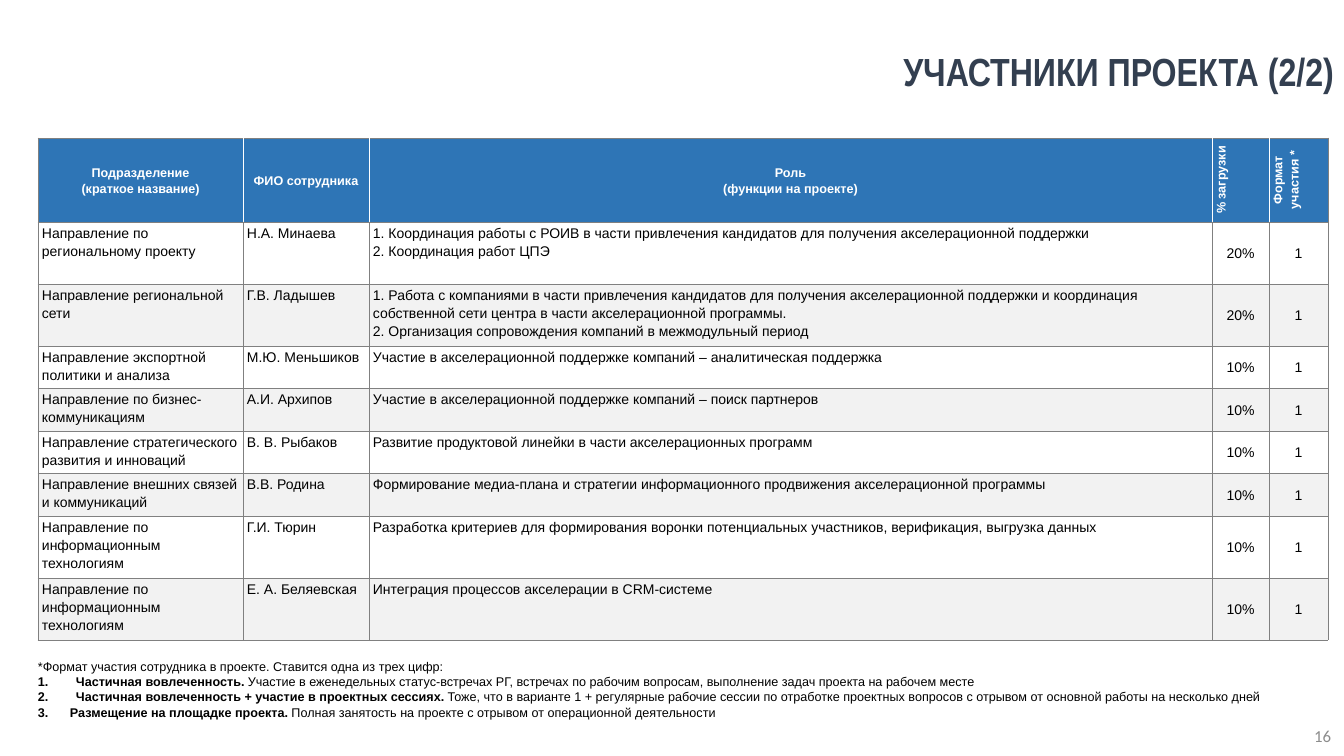
"""Build the project participants slide with its staffing table."""
from dataclasses import dataclass
from typing import NamedTuple

from lxml import etree
from pptx import Presentation
from pptx import util as u
from pptx.dml.color import RGBColor
from pptx.enum import text as t
from pptx.oxml import ns

EMU_PER_PX = 914400 / 100.8


@dataclass(frozen=True)
class Theme:
    title: str = "333F50"
    header: str = "2E75B6"
    band: str = "F2F2F2"
    grid: str = "808080"
    white: str = "FFFFFF"
    black: str = "000000"
    number: str = "8C8C8C"
    body_font: str = "Arial"
    title_font: str = "Arial Narrow"
    number_font: str = "Calibri"
    title_pt: int = 28
    number_pt: int = 12
    body_pt: int = 10
    small_pt: int = 9


class Column(NamedTuple):
    heading: str
    width: int
    centred: bool = False
    upright: bool = False


class Member(NamedTuple):
    unit: str
    name: str
    role: str
    load: str
    mode: str
    height: int


class Note(NamedTuple):
    term: str
    meaning: str
    indent: int


TH = Theme()
HEADER_HEIGHT = 84
COLUMNS = [
    Column("Подразделение\v(краткое название)", 205),
    Column("ФИО сотрудника", 126),
    Column("Роль\v(функции на проекте)", 843),
    Column("% загрузки", 57, True, True),
    Column("Формат\vучастия *", 59, True, True),
]
MEMBERS = [
    Member("Направление по региональному проекту", "Н.А. Минаева",
           "1. Координация работы с РОИВ в части привлечения кандидатов для получения "
           "акселерационной поддержки\n2. Координация работ ЦПЭ", "20%", "1", 62),
    Member("Направление региональной сети", "Г.В. Ладышев",
           "1. Работа с компаниями в части привлечения кандидатов для получения акселерационной "
           "поддержки и координация собственной сети центра в части акселерационной программы.\n"
           "2. Организация сопровождения компаний в межмодульный период", "20%", "1", 62),
    Member("Направление экспортной политики и анализа", "М.Ю. Меньшиков",
           "Участие в акселерационной поддержке компаний – аналитическая поддержка", "10%", "1", 42),
    Member("Направление по бизнес-коммуникациям", "А.И. Архипов",
           "Участие в акселерационной поддержке компаний – поиск партнеров", "10%", "1", 43),
    Member("Направление стратегического развития и инноваций", "В. В. Рыбаков",
           "Развитие продуктовой линейки в части акселерационных программ", "10%", "1", 42),
    Member("Направление внешних связей и коммуникаций", "В.В. Родина",
           "Формирование медиа-плана и стратегии информационного продвижения "
           "акселерационной программы", "10%", "1", 43),
    Member("Направление по информационным технологиям", "Г.И. Тюрин",
           "Разработка критериев для формирования воронки потенциальных участников, "
           "верификация, выгрузка данных", "10%", "1", 62),
    Member("Направление по информационным технологиям", "Е. А. Беляевская",
           "Интеграция процессов акселерации в CRM-системе", "10%", "1", 62),
]
NOTES = [
    Note("Частичная вовлеченность.",
         " Участие в еженедельных статус-встречах РГ, встречах по рабочим вопросам, "
         "выполнение задач проекта на рабочем месте", 38),
    Note("Частичная вовлеченность + участие в проектных сессиях.",
         " Тоже, что в варианте 1 + регулярные рабочие сессии по отработке проектных вопросов "
         "с отрывом от основной работы на несколько дней", 38),
    Note("Размещение на площадке проекта.",
         " Полная занятость на проекте с отрывом от операционной деятельности", 32),
]


def px(n: int) -> int:
    return round(n * EMU_PER_PX)


def write(p, text: str, *, size: int = TH.body_pt, color: str = TH.black,
          font: str = TH.body_font, bold: bool = False, align=t.PP_ALIGN.LEFT,
          spacing: float = 1.0) -> None:
    p.alignment, p.line_spacing = align, spacing
    for i, line in enumerate(text.split("\v")):
        if i:
            p.add_line_break()
        r = p.add_run()
        r.text = line
        r.font.name, r.font.size, r.font.bold = font, u.Pt(size), bold
        r.font.color.rgb = RGBColor.from_string(color)


def text_box(s, x: int, y: int, w: int, h: int):
    tf = s.shapes.add_textbox(px(x), px(y), px(w), px(h)).text_frame
    tf.word_wrap = True
    return tf


def border(cell, colors: dict[str, str]) -> None:
    tc_pr = cell._tc.get_or_add_tcPr()
    for side in "LRTB":
        ln = etree.SubElement(tc_pr, ns.qn(f"a:ln{side}"), w=str(u.Pt(0.5)))
        fill = etree.SubElement(ln, ns.qn("a:solidFill"))
        etree.SubElement(fill, ns.qn("a:srgbClr"), val=colors.get(side, TH.grid))


def paint(cell, color: str) -> None:
    cell.fill.solid()
    cell.fill.fore_color.rgb = RGBColor.from_string(color)


def set_margins(cell, x: int, y: int) -> None:
    cell.margin_left = cell.margin_right = px(x)
    cell.margin_top = cell.margin_bottom = px(y)


def header_cell(cell, column: Column, index: int) -> None:
    inner = {"L": index > 0, "R": index < len(COLUMNS) - 1}
    border(cell, {side: TH.white for side, shown in inner.items() if shown})
    paint(cell, TH.header)
    set_margins(cell, 0, 0)
    cell.vertical_anchor = t.MSO_ANCHOR.MIDDLE
    if column.upright:
        cell._tc.get_or_add_tcPr().set("vert", "vert270")
    write(cell.text_frame.paragraphs[0], column.heading, size=TH.small_pt, color=TH.white,
          bold=True, align=t.PP_ALIGN.CENTER, spacing=1.15)


def body_cell(cell, column: Column, text: str, color: str) -> None:
    border(cell, {})
    paint(cell, color)
    set_margins(cell, 4, 2)
    cell.vertical_anchor = t.MSO_ANCHOR.MIDDLE if column.centred else t.MSO_ANCHOR.TOP
    align = t.PP_ALIGN.CENTER if column.centred else t.PP_ALIGN.LEFT
    tf = cell.text_frame
    for i, line in enumerate(text.split("\n")):
        write(tf.add_paragraph() if i else tf.paragraphs[0], line, align=align, spacing=1.15)


def add_staff_table(s, x: int, y: int) -> None:
    widths = [c.width for c in COLUMNS]
    heights = [HEADER_HEIGHT, *(m.height for m in MEMBERS)]
    table = s.shapes.add_table(len(heights), len(widths), px(x), px(y),
                               px(sum(widths)), px(sum(heights))).table
    table.first_row = table.horz_banding = False
    for row, height in zip(table.rows, heights):
        row.height = px(height)
    for i, column in enumerate(COLUMNS):
        table.columns[i].width = px(column.width)
        header_cell(table.cell(0, i), column, i)
        for j, member in enumerate(MEMBERS, 1):
            body_cell(table.cell(j, i), column, member[i], TH.white if j % 2 else TH.band)


def add_notes(s) -> None:
    tf = text_box(s, 28, 654, 1309, 72)
    write(tf.paragraphs[0], "*Формат участия сотрудника в проекте. Ставится одна из трех цифр:",
          size=TH.small_pt)
    for number, note in enumerate(NOTES, 1):
        p = tf.add_paragraph()
        p_pr = p._p.get_or_add_pPr()
        p_pr.set("marL", str(px(note.indent)))
        p_pr.set("indent", str(-px(note.indent)))
        etree.SubElement(p_pr, ns.qn("a:buAutoNum"), type="arabicPeriod", startAt=str(number))
        write(p, note.term, size=TH.small_pt, bold=True)
        write(p, note.meaning, size=TH.small_pt)


def main() -> None:
    prs = Presentation()
    prs.slide_width, prs.slide_height = px(1344), px(756)
    s = prs.slides.add_slide(prs.slide_layouts[5])
    sp = s.shapes.title
    sp.left, sp.top, sp.width, sp.height = px(355), px(50), px(989), px(48)
    tf = sp.text_frame
    tf.auto_size, tf.vertical_anchor = t.MSO_AUTO_SIZE.NONE, t.MSO_ANCHOR.MIDDLE
    write(tf.paragraphs[0], "УЧАСТНИКИ ПРОЕКТА (2/2)", size=TH.title_pt, color=TH.title,
          font=TH.title_font, bold=True, align=t.PP_ALIGN.RIGHT, spacing=0.9)
    add_staff_table(s, 38, 138)
    add_notes(s)
    tf = text_box(s, 1039, 716, 302, 40)
    tf.vertical_anchor = t.MSO_ANCHOR.MIDDLE
    write(tf.paragraphs[0], "16", size=TH.number_pt, color=TH.number,
          font=TH.number_font, align=t.PP_ALIGN.RIGHT)
    prs.save("out.pptx")


if __name__ == "__main__":
    main()
